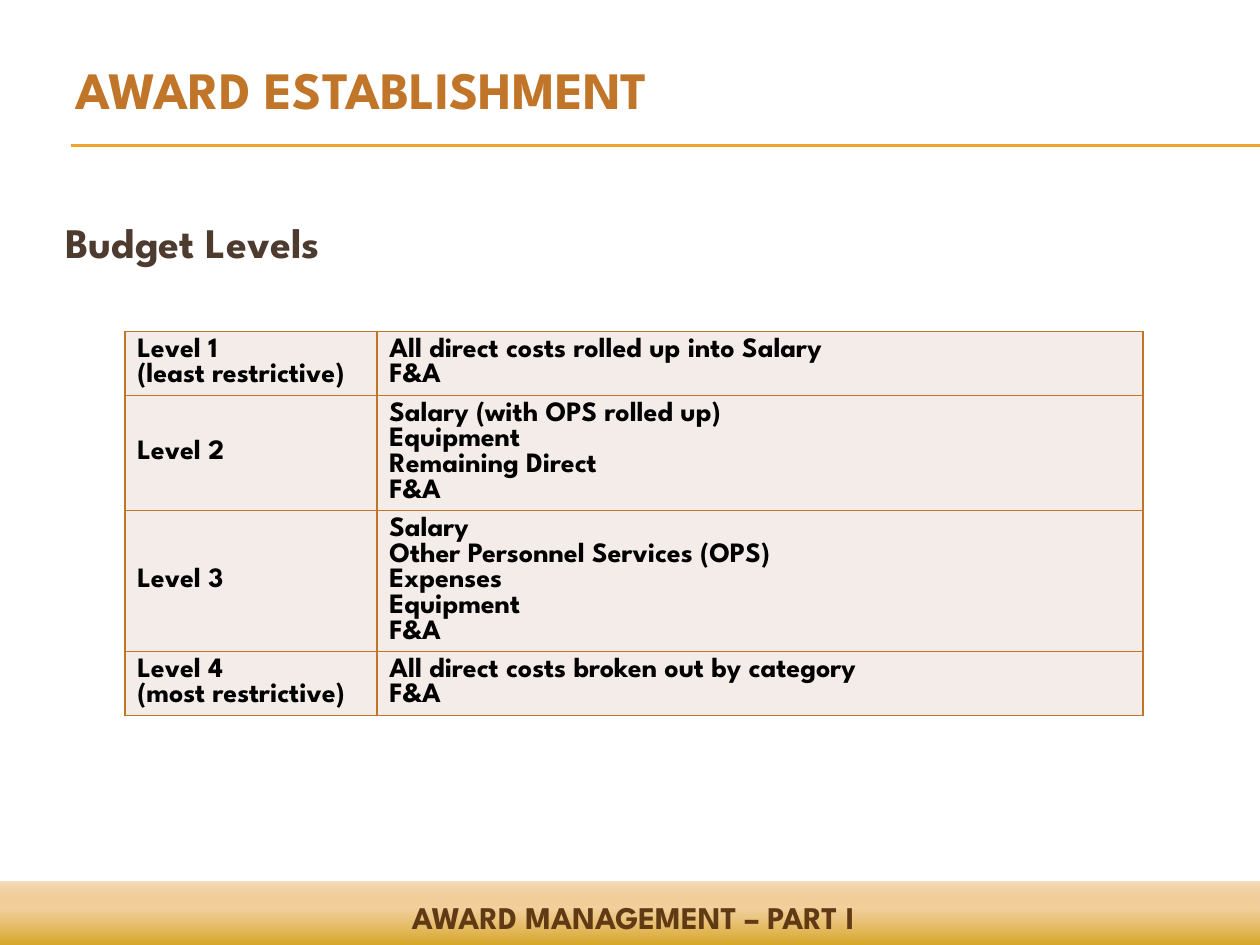
from lxml import etree
from pptx import Presentation
from pptx.dml.color import RGBColor
from pptx.enum.shapes import MSO_CONNECTOR, MSO_SHAPE
from pptx.enum.text import MSO_ANCHOR, MSO_AUTO_SIZE, PP_ALIGN
from pptx.oxml import parse_xml
from pptx.oxml.ns import nsdecls, qn
from pptx.util import Inches, Pt

STRAIGHT = MSO_CONNECTOR.STRAIGHT
RECTANGLE = MSO_SHAPE.RECTANGLE
MIDDLE, BOTTOM, TOP = MSO_ANCHOR.MIDDLE, MSO_ANCHOR.BOTTOM, MSO_ANCHOR.TOP
LEFT, CENTER = PP_ALIGN.LEFT, PP_ALIGN.CENTER
FONT = "League Spartan"
COLORS = {
    "rule": "F0A22E", "title": "C17529", "heading": "4E3B30",
    "footer": "603A14", "text": "000000", "cell": "F4ECE8", "border": "C17529",
}
# Position %, colour, opacity %, from the bottom of the band upwards
BAND_STOPS = [(0, "CC9900", 100), (65, "EFC17E", 75), (100, "D68000", 25)]
BUDGET_LEVELS = [
    (["Level 1", "(least restrictive)"],
     ["All direct costs rolled up into Salary", "F&A"]),
    (["Level 2"],
     ["Salary (with OPS rolled up)", "Equipment", "Remaining Direct", "F&A"]),
    (["Level 3"],
     ["Salary", "Other Personnel Services (OPS)", "Expenses", "Equipment", "F&A"]),
    (["Level 4", "(most restrictive)"],
     ["All direct costs broken out by category", "F&A"]),
]


def write_lines(frame, lines, size, color, anchor=TOP, align=LEFT):
    """Fill a text frame with one bold paragraph per line."""
    frame.word_wrap = True
    frame.auto_size = MSO_AUTO_SIZE.NONE
    frame.vertical_anchor = anchor
    for i, line in enumerate(lines):
        paragraph = frame.paragraphs[0] if i == 0 else frame.add_paragraph()
        paragraph.alignment = align
        run = paragraph.add_run()
        run.text = line
        run.font.name = FONT
        run.font.size = Pt(size)
        run.font.bold = True
        run.font.color.rgb = RGBColor.from_string(COLORS[color])


def add_borders(cell):
    for side in ("lnL", "lnR", "lnT", "lnB"):
        cell._tc.get_or_add_tcPr().append(parse_xml(
            f'<a:{side} {nsdecls("a")} w="{Pt(1)}"><a:solidFill>'
            f'<a:srgbClr val="{COLORS["border"]}"/></a:solidFill></a:{side}>'))


prs = Presentation()
prs.slide_width, prs.slide_height = Inches(10), Inches(7.5)
slide = prs.slides.add_slide(prs.slide_layouts[5])
shapes = slide.shapes

# Double rule under the title
for y in (1.15, 1.16):
    rule = shapes.add_connector(STRAIGHT, Inches(0.56), Inches(y), Inches(10), Inches(y))
    rule.line.color.rgb = RGBColor.from_string(COLORS["rule"])
    rule.line.width = Pt(0.75)
    etree.SubElement(rule._element.spPr, qn("a:effectLst"))

# Footer band
band = shapes.add_shape(RECTANGLE, Inches(-0.01), Inches(7), Inches(10.03), Inches(0.58))
band.shadow.inherit = False
band.line.fill.background()
band.fill.gradient()
band.fill.gradient_angle = 90
stop_list = band._element.spPr.find(qn("a:gradFill")).find(qn("a:gsLst"))
for stop in list(stop_list):
    stop_list.remove(stop)
for position, color, opacity in BAND_STOPS:
    stop_list.append(parse_xml(
        f'<a:gs {nsdecls("a")} pos="{position * 1000}"><a:srgbClr val="{color}">'
        f'<a:alpha val="{opacity * 1000}"/></a:srgbClr></a:gs>'))

footer = shapes.add_textbox(Inches(0.15), Inches(7.08), Inches(9.75), Inches(0.4))
write_lines(footer.text_frame, ["AWARD MANAGEMENT – PART I"], 18, "footer", align=CENTER)

# Title and heading
title = shapes.title
title.left, title.top = Inches(0.5), Inches(0.3)
title.width, title.height = Inches(8.83), Inches(0.7)
write_lines(title.text_frame, ["AWARD ESTABLISHMENT"], 30, "title", anchor=BOTTOM)

heading = shapes.add_textbox(Inches(0.42), Inches(1.67), Inches(9.08), Inches(0.6))
write_lines(heading.text_frame, ["Budget Levels"], 24, "heading")

# Budget level table, each row as high as its longest cell
levels = shapes.add_table(len(BUDGET_LEVELS), 2, Inches(0.99), Inches(2.63),
                          Inches(8.08), Inches(3)).table
levels.first_row = levels.horz_banding = False
for column, width in zip(levels.columns, (2, 6.08)):
    column.width = Inches(width)
for r, contents in enumerate(BUDGET_LEVELS):
    levels.rows[r].height = Inches(0.1 + 0.2 * max(map(len, contents)))
    for c, lines in enumerate(contents):
        cell = levels.cell(r, c)
        add_borders(cell)
        cell.fill.solid()
        cell.fill.fore_color.rgb = RGBColor.from_string(COLORS["cell"])
        cell.vertical_anchor = MIDDLE
        write_lines(cell.text_frame, lines, 16, "text", anchor=None)

prs.save("out.pptx")
